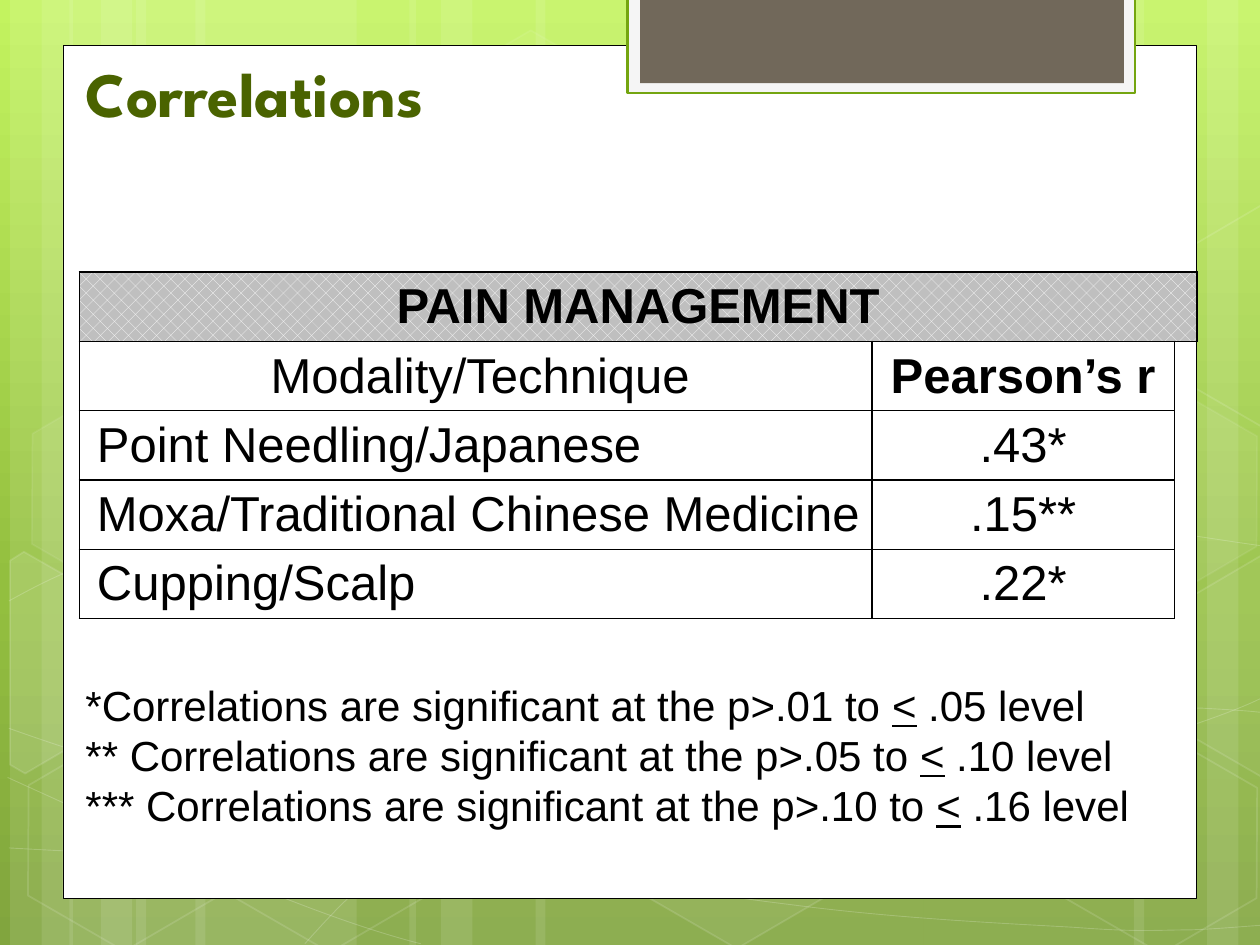
from copy import deepcopy
from dataclasses import dataclass

from pptx import Presentation
from pptx.dml.color import RGBColor
from pptx.enum.dml import MSO_PATTERN
from pptx.enum.shapes import MSO_SHAPE
from pptx.enum.text import MSO_ANCHOR, MSO_AUTO_SIZE, PP_ALIGN
from pptx.oxml.ns import qn
from pptx.oxml.xmlchemy import OxmlElement
from pptx.util import Inches, Pt

RECTANGLE, HEXAGON = MSO_SHAPE.RECTANGLE, MSO_SHAPE.HEXAGON
LEFT, CENTER = PP_ALIGN.LEFT, PP_ALIGN.CENTER


@dataclass(frozen=True)
class Theme:
    white: str = "FFFFFF"
    black: str = "000000"
    title: str = "4A6300"
    frame: str = "F5F5F5"
    frame_line: str = "74A510"
    tab: str = "71685A"
    header: str = "BFBFBF"
    gradient: tuple = ((0, "C3F35F"), (0.62, "93BF3F"), (1, "81A53E"))
    title_font: str = "League Spartan"
    body_font: str = "Arial"
    title_size: int = 36
    table_size: int = 28
    note_size: int = 24


THEME = Theme()
WIDTH, HEIGHT = 10, 7.5

# Content
TITLE = "Correlations"
TABLE_TITLE = "PAIN MANAGEMENT"
TABLE_ROWS = [
    ("Modality/Technique", "Pearson’s r"),
    ("Point Needling/Japanese", ".43*"),
    ("Moxa/Traditional Chinese Medicine", ".15**"),
    ("Cupping/Scalp", ".22*"),
]
COLUMN_WIDTHS, ROW_HEIGHT = (6.29, 2.4, 0.1), 0.55
NOTES = [("*", ".01", ".05"), ("** ", ".05", ".10"), ("*** ", ".10", ".16")]

# Background decoration: bars are (left, width)
BARS = [(1.08, 1.75), (0.08, 0.5), (0.33, 0.83), (1.55, 1.75), (0.55, 0.5), (0.8, 0.83),
        (7.33, 1.75), (9.58, 0.5), (9, 0.83), (4.25, 3.08), (3.25, 0.5), (3.5, 0.83)]
# Each wave is a start point followed by control, control, end triples
WAVES = [
    [(0.07, 6.73), (0.61, 6.76), (1.15, 6.79), (1.9, 6.78), (2.65, 6.77), (3.58, 6.75),
     (4.58, 6.65), (5.58, 6.55), (7, 6.36), (7.92, 6.17), (8.83, 5.98), (9.77, 5.68), (10.07, 5.51)],
    [(0.07, 4.77), (0.36, 4.61), (0.65, 4.46), (1.21, 4.31), (1.78, 4.16), (2.59, 3.94),
     (3.47, 3.87), (4.36, 3.8), (5.44, 3.79), (6.54, 3.87), (7.64, 3.95), (9.47, 4.26), (10.07, 4.34)],
    [(0.06, 6.17), (1.27, 6.72), (2.47, 7.27), (3.34, 7.49)],
    [(0.07, 5.78), (0.38, 5.89), (0.7, 6), (1.28, 6.16), (1.86, 6.31), (2.73, 6.56), (3.57, 6.73),
     (4.4, 6.9), (5.45, 7.08), (6.28, 7.18), (7.11, 7.29), (8, 7.33), (8.53, 7.36),
     (9.05, 7.4), (9.19, 7.38), (9.45, 7.38), (9.71, 7.37), (9.89, 7.35), (10.07, 7.34)],
    [(2.42, 7.49), (2.6, 7.29), (2.78, 7.09), (3.02, 6.91), (3.26, 6.73), (3.6, 6.53), (3.88, 6.39),
     (4.16, 6.25), (4.33, 6.19), (4.7, 6.09), (5.06, 5.99), (5.73, 5.85), (6.08, 5.78),
     (6.44, 5.71), (6.49, 5.71), (6.8, 5.69), (7.11, 5.66), (7.6, 5.63), (7.94, 5.62),
     (8.29, 5.61), (8.86, 5.62), (8.86, 5.62), (9.1, 5.62), (9.3, 5.62), (9.53, 5.62),
     (9.71, 5.63), (9.88, 5.64), (9.97, 5.65), (10.06, 5.66), (10.03, 5.65), (10.06, 5.66)],
]
# (left, top, fill opacity, line opacity) in percent
HEXAGONS = [(3.34, 0.36, 4, 8), (4.97, 5.89, 6, 12), (0.11, 5.91, 0, 12), (0.14, 3.12, 7, 8),
            (1.74, 5.92, 0, 12), (7.53, 4.53, 10, 12), (8.34, 5.93, 0, 12), (8.34, 3.14, 7, 8)]
# Hexagons cut by the slide edge: (fill opacity, outline)
CUT_HEXAGONS = [
    (10, [(0.08, 4.45), (0.19, 4.38), (0.96, 4.82), (0.95, 5.7), (0.2, 6.14), (0.08, 6.07)]),
    (4, [(9.26, 4.85), (10.01, 4.41), (10.09, 4.46), (10.09, 6.13), (10.02, 6.17), (9.26, 5.73)]),
    (0, [(9.26, 2.07), (10.01, 1.63), (10.1, 1.68), (10.09, 3.35), (10.02, 3.39), (9.26, 2.95)]),
]


def paint(fill, color, opacity=100):
    if not opacity:
        fill.background()
        return
    fill.solid()
    fill.fore_color.rgb = RGBColor.from_string(color)
    if opacity < 100:
        color_element = fill._xPr.find(qn("a:solidFill"))[0]
        alpha = OxmlElement("a:alpha")
        alpha.set("val", str(opacity * 1000))
        color_element.append(alpha)


def style(shape, color, opacity=100, line=None, line_width=1, line_opacity=100):
    shape.shadow.inherit = False
    paint(shape.fill, color, opacity)
    paint(shape.line.fill, line, line_opacity if line else 0)
    if line:
        shape.line.width = Pt(line_width)


def add_box(slide, kind, left, top, width, height, *look):
    shape = slide.shapes.add_shape(kind, *map(Inches, (left, top, width, height)))
    style(shape, *look)
    return shape


def add_outline(slide, points, close, *look):
    points = [(Inches(x), Inches(y)) for x, y in points]
    builder = slide.shapes.build_freeform(*points[0], scale=1.0)
    builder.add_line_segments(points[1:], close=close)
    shape = builder.convert_to_shape()
    style(shape, *look)
    return shape


def bend(shape):
    """Turn every three line segments into one Bézier curve."""
    segments = list(shape._element.iter(qn("a:lnTo")))
    for start in range(0, len(segments), 3):
        curve = OxmlElement("a:cubicBezTo")
        segments[start].addprevious(curve)
        for segment in segments[start:start + 3]:
            curve.append(segment[0])
            segment.getparent().remove(segment)


def add_run(paragraph, text, size, font=THEME.body_font, color=THEME.black, bold=False, underline=False):
    run = paragraph.add_run()
    run.text = text
    run.font.size, run.font.name = Pt(size), font
    run.font.bold, run.font.underline = bold, underline
    run.font.color.rgb = RGBColor.from_string(color)


def add_background(slide):
    fill = slide.background.fill
    fill.gradient()
    fill.gradient_angle = 270
    stop_list = slide._element.find(".//" + qn("a:gsLst"))
    stop_list.append(deepcopy(stop_list[-1]))
    for stop, (position, color) in zip(fill.gradient_stops, THEME.gradient):
        stop.position = position
        stop.color.rgb = RGBColor.from_string(color)
    for left, width in BARS:
        add_box(slide, RECTANGLE, left, 0, width, HEIGHT, THEME.white, 10)
    for wave in WAVES:
        bend(add_outline(slide, wave, False, THEME.white, 0, THEME.white, 0.5, 20))
    for left, top, opacity, line_opacity in HEXAGONS:
        hexagon = add_box(slide, HEXAGON, left, top, 1.75, 1.52,
                          THEME.white, opacity, THEME.white, 1, line_opacity)
        hexagon.rotation = 30
        hexagon.adjustments[0], hexagon.adjustments[1] = 0.285, 1.155
    for opacity, points in CUT_HEXAGONS:
        add_outline(slide, points, True, THEME.white, opacity, THEME.white, 1, 12)


def set_borders(cell, sides):
    properties = cell._tc.get_or_add_tcPr()
    for side in "LRTB":
        border = OxmlElement(f"a:ln{side}")
        properties.append(border)
        fill = OxmlElement("a:solidFill" if side in sides else "a:noFill")
        border.append(fill)
        if side in sides:
            border.set("w", str(Pt(1)))
            color = OxmlElement("a:srgbClr")
            color.set("val", THEME.black)
            fill.append(color)


def fill_cell(cell, text, align, bold, indented=False):
    cell.vertical_anchor = MSO_ANCHOR.MIDDLE
    paragraph = cell.text_frame.paragraphs[0]
    paragraph.alignment = align
    if indented:
        properties = paragraph._p.get_or_add_pPr()
        properties.set("marL", str(Inches(0.38)))
        properties.set("indent", str(Inches(-0.31)))
    add_run(paragraph, text, THEME.table_size, bold=bold)


def add_correlation_table(slide):
    row_count = len(TABLE_ROWS) + 1
    frame = slide.shapes.add_table(row_count, len(COLUMN_WIDTHS), Inches(0.63), Inches(2.16),
                                   Inches(sum(COLUMN_WIDTHS)), Inches(ROW_HEIGHT * row_count))
    table = frame.table
    table.first_row = table.horz_banding = False
    # "No Style, No Grid"
    table._tbl.tblPr.find(qn("a:tableStyleId")).text = "{2D5ABB26-0587-4C30-8999-92F81FD0307C}"
    for column, width in zip(table.columns, COLUMN_WIDTHS):
        column.width = Inches(width)
    for row_index, row in enumerate(table.rows):
        row.height = Inches(ROW_HEIGHT)
        for column_index, cell in enumerate(row.cells):
            is_spacer = row_index > 0 and column_index == 2
            set_borders(cell, ("LT" if row_index == 1 else "L") if is_spacer else "LRTB")
            cell.margin_left = cell.margin_right = Inches(0.07)
            cell.margin_top = cell.margin_bottom = 0
            cell.fill.background()
    # Header row
    header = table.cell(0, 0)
    header.merge(table.cell(0, 2))
    fill_cell(header, TABLE_TITLE, CENTER, True)
    header.fill.patterned()
    header.fill.pattern = MSO_PATTERN.PERCENT_25
    header.fill.fore_color.rgb = RGBColor.from_string(THEME.white)
    header.fill.back_color.rgb = RGBColor.from_string(THEME.header)
    # Body rows
    for row_index, (label, value) in enumerate(TABLE_ROWS, 1):
        is_heading = row_index == 1
        fill_cell(table.cell(row_index, 0), label, CENTER if is_heading else LEFT, False, True)
        fill_cell(table.cell(row_index, 1), value, CENTER, is_heading)


def add_notes(slide):
    text_frame = slide.shapes.add_textbox(*map(Inches, (0.58, 5.34, 8.67, 1.31))).text_frame
    text_frame.word_wrap = True
    text_frame.auto_size = MSO_AUTO_SIZE.SHAPE_TO_FIT_TEXT
    for index, (stars, low, high) in enumerate(NOTES):
        paragraph = text_frame.add_paragraph() if index else text_frame.paragraphs[0]
        add_run(paragraph, f"{stars}Correlations are significant at the p>{low} to ", THEME.note_size)
        add_run(paragraph, "<", THEME.note_size, underline=True)
        add_run(paragraph, f" {high} level", THEME.note_size)


def add_title(slide):
    title = slide.shapes.title
    slide.shapes._spTree.append(title._element)  # bring in front of the panel
    title.left, title.top, title.width, title.height = map(Inches, (0.58, 0.41, 4.29, 0.67))
    title.text_frame.vertical_anchor = MSO_ANCHOR.BOTTOM
    paragraph = title.text_frame.paragraphs[0]
    paragraph.alignment = LEFT
    add_run(paragraph, TITLE, THEME.title_size, THEME.title_font, THEME.title, bold=True)


def main():
    presentation = Presentation()
    presentation.slide_width, presentation.slide_height = Inches(WIDTH), Inches(HEIGHT)
    slide = presentation.slides.add_slide(presentation.slide_layouts[5])
    add_background(slide)
    # White panel and the framed tab at its top
    add_box(slide, RECTANGLE, 0.5, 0.36, 9, 6.77, THEME.white, 100, THEME.black, 0.5)
    add_box(slide, RECTANGLE, 4.98, -0.02, 4.03, 0.76, THEME.frame, 100, THEME.frame_line, 1.25)
    add_box(slide, RECTANGLE, 5.08, -0.02, 3.84, 0.68, THEME.tab)
    add_title(slide)
    add_correlation_table(slide)
    add_notes(slide)
    presentation.save("out.pptx")


if __name__ == "__main__":
    main()
